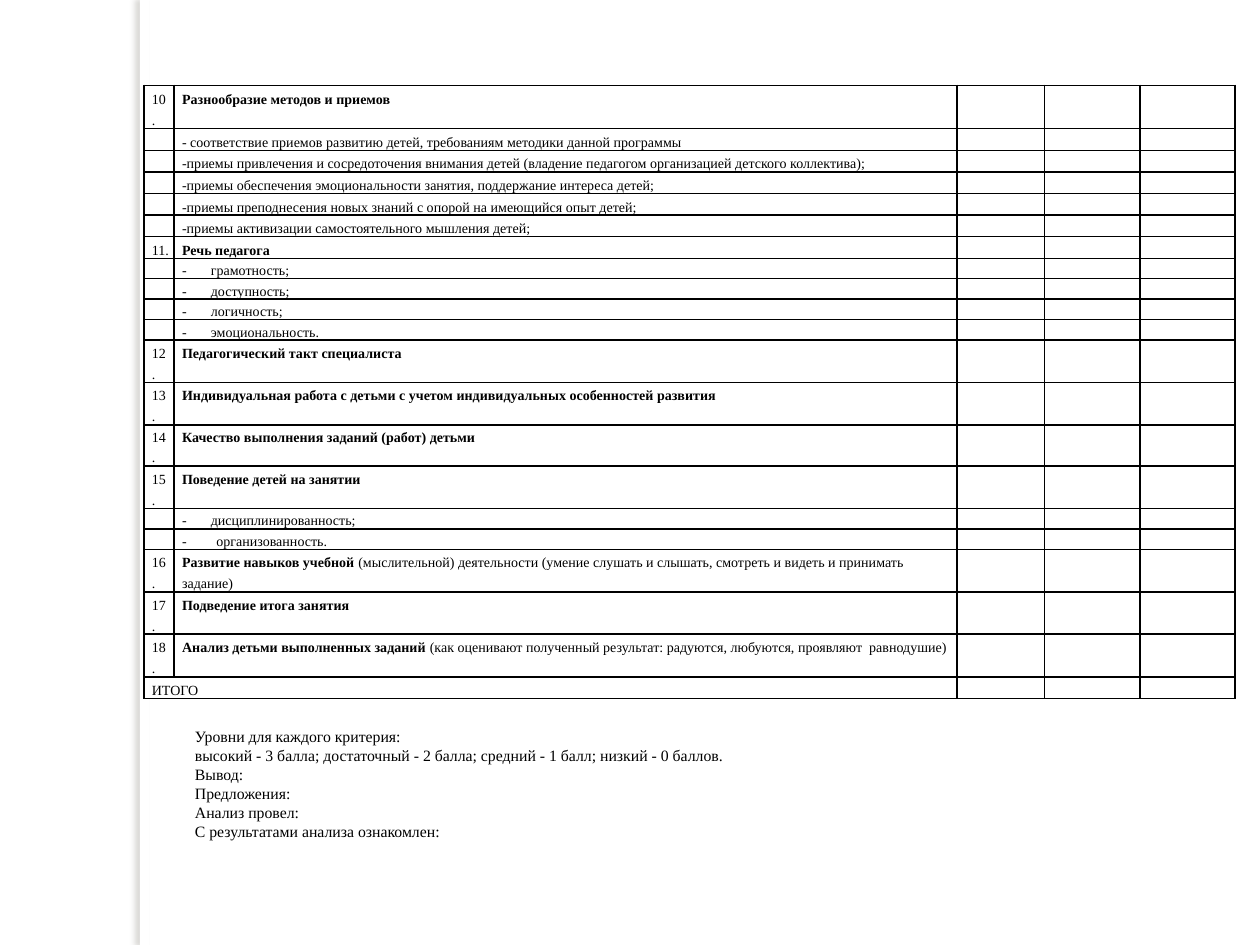
import dataclasses
import typing

import lxml.etree
import pptx
import pptx.dml.color
import pptx.enum.shapes
import pptx.enum.text
import pptx.oxml.ns
import pptx.util
from pptx.util import Cm

COLORS = {"text": "000000", "border": "000000", "paper": "FFFFFF", "shadow": "736F63"}
FONT = "Times New Roman"
TABLE_TEXT_SIZE = 8
COLUMN_WIDTHS = (0.61, 15.78, 1.77, 1.92, 1.92)


@dataclasses.dataclass
class Criterion:
    number: str = ""
    heading: str = ""
    detail: str = ""
    spacing: float = 12.3
    lines: int = 1
    tab: float = 0


CRITERIA = [
    Criterion("10.", "Разнообразие методов и приемов", spacing=12.4, lines=2),
    Criterion(detail="- соответствие приемов развитию детей, требованиям методики данной программы"),
    Criterion(detail="-приемы привлечения и сосредоточения внимания детей "
                     "(владение педагогом организацией детского коллектива);"),
    Criterion(detail="-приемы обеспечения эмоциональности занятия, поддержание интереса детей;"),
    Criterion(detail="-приемы преподнесения новых знаний с опорой на имеющийся опыт детей;", spacing=12.4),
    Criterion(detail="-приемы активизации самостоятельного мышления детей;", spacing=12.2),
    Criterion("11.", "Речь педагога", spacing=12.4),
    Criterion(detail="-\tграмотность;", spacing=11.6, tab=0.58),
    Criterion(detail="-\tдоступность;", spacing=11.7, tab=0.58),
    Criterion(detail="-\tлогичность;", spacing=11.6, tab=0.58),
    Criterion(detail="-\tэмоциональность.", spacing=11.7, tab=0.58),
    Criterion("12.", "Педагогический такт специалиста", spacing=12.1, lines=2),
    Criterion("13.", "Индивидуальная работа с детьми с учетом индивидуальных особенностей развития",
              spacing=12.1, lines=2),
    Criterion("14.", "Качество выполнения заданий (работ) детьми", spacing=11.7, lines=2),
    Criterion("15.", "Поведение детей на занятии", spacing=12.1, lines=2),
    Criterion(detail="-\tдисциплинированность;", spacing=11.7, tab=0.58),
    Criterion(detail="-\tорганизованность.", spacing=11.7, tab=0.69),
    Criterion("16.", "Развитие навыков учебной ",
              "(мыслительной) деятельности (умение слушать и слышать, смотреть и видеть и принимать задание)",
              spacing=12.1, lines=2),
    Criterion("17.", "Подведение итога занятия", spacing=12.1, lines=2),
    Criterion("18.", "Анализ детьми выполненных заданий ",
              "(как оценивают полученный результат: радуются, любуются, проявляют  равнодушие)",
              spacing=12.2, lines=2),
    Criterion("ИТОГО", spacing=12.4),
]

CONCLUSION = [
    "Уровни для каждого критерия:",
    "высокий - 3 балла; достаточный - 2 балла; средний - 1 балл; низкий - 0 баллов.",
    "Вывод:",
    "Предложения:",
    "Анализ провел:",
    "С результатами анализа ознакомлен:",
]


def add_xml(parent: typing.Any, tag: str, **attributes: typing.Any) -> typing.Any:
    values = {name: str(value) for name, value in attributes.items()}
    return lxml.etree.SubElement(parent, pptx.oxml.ns.qn(tag), values)


def add_text(paragraph: typing.Any, text: str, *, size: float, bold: bool = False) -> None:
    if not text:
        return
    run = paragraph.add_run()
    run.text = text
    run.font.name = FONT
    run.font.size = pptx.util.Pt(size)
    run.font.bold = bold
    run.font.color.rgb = pptx.dml.color.RGBColor.from_string(COLORS["text"])


def format_paragraph(paragraph: typing.Any, *, indent: float, spacing: float = 0, tab: float = 0) -> None:
    """Set the left indent and tab in centimetres and the exact line spacing in points."""
    if spacing:
        paragraph.line_spacing = pptx.util.Pt(spacing)
    properties = paragraph._p.get_or_add_pPr()
    properties.set("marL", str(int(Cm(indent))))
    if tab:
        tabs = add_xml(properties, "a:tabLst")
        add_xml(tabs, "a:tab", pos=int(Cm(tab)), algn="l")


def format_cell(cell: typing.Any, criterion: Criterion) -> None:
    cell.margin_left = cell.margin_right = Cm(0.1)
    cell.margin_top = cell.margin_bottom = 0
    properties = cell._tc.get_or_add_tcPr()
    for side in ("a:lnL", "a:lnR", "a:lnT", "a:lnB"):
        line = add_xml(properties, side, w=int(pptx.util.Pt(1)))
        add_xml(add_xml(line, "a:solidFill"), "a:srgbClr", val=COLORS["border"])
    cell.fill.background()
    paragraph = cell.text_frame.paragraphs[0]
    format_paragraph(paragraph, indent=0.06, spacing=criterion.spacing, tab=criterion.tab)
    # The end mark sets the height of an empty cell.
    end_mark = add_xml(paragraph._p, "a:endParaRPr", sz=TABLE_TEXT_SIZE * 100)
    add_xml(end_mark, "a:latin", typeface=FONT)


def add_criteria_table(slide: typing.Any) -> None:
    frame = slide.shapes.add_table(len(CRITERIA), len(COLUMN_WIDTHS), Cm(2.9), Cm(1.72),
                                   Cm(sum(COLUMN_WIDTHS)), Cm(12.3))
    table = frame.table
    table.first_row = table.horz_banding = False
    for column, width in zip(table.columns, COLUMN_WIDTHS):
        column.width = Cm(width)
    for row, criterion in zip(table.rows, CRITERIA):
        row.height = pptx.util.Pt(criterion.spacing * criterion.lines)
        for cell in row.cells:
            format_cell(cell, criterion)
        number, description = (row.cells[index].text_frame.paragraphs[0] for index in (0, 1))
        add_text(number, criterion.number, size=TABLE_TEXT_SIZE)
        add_text(description, criterion.heading, size=TABLE_TEXT_SIZE, bold=True)
        add_text(description, criterion.detail, size=TABLE_TEXT_SIZE)
    last = len(CRITERIA) - 1
    table.cell(last, 0).merge(table.cell(last, 1))


def add_page_edge(slide: typing.Any) -> None:
    """Draw the white strip that casts a soft shadow to the left."""
    edge = slide.shapes.add_shape(pptx.enum.shapes.MSO_SHAPE.RECTANGLE,
                                  Cm(2.82), 0, Cm(0.2), Cm(19.05))
    edge.fill.solid()
    edge.fill.fore_color.rgb = pptx.dml.color.RGBColor.from_string(COLORS["paper"])
    edge.line.fill.background()
    effects = add_xml(edge._element.spPr, "a:effectLst")
    shadow = add_xml(effects, "a:outerShdw", blurRad=int(pptx.util.Pt(3)), dist=int(pptx.util.Pt(3)),
                     dir=180 * 60000, algn="tl", rotWithShape=0)
    color = add_xml(shadow, "a:srgbClr", val=COLORS["shadow"])
    add_xml(color, "a:alpha", val=25000)


def add_conclusion(slide: typing.Any) -> None:
    frame = slide.shapes.add_textbox(Cm(3.3), Cm(14.53), Cm(17.55), Cm(2.57)).text_frame
    frame.word_wrap = True
    frame.auto_size = pptx.enum.text.MSO_AUTO_SIZE.SHAPE_TO_FIT_TEXT
    for index, text in enumerate(CONCLUSION):
        paragraph = frame.add_paragraph() if index else frame.paragraphs[0]
        format_paragraph(paragraph, indent=0.38)
        add_text(paragraph, text, size=9)


def main() -> None:
    presentation = pptx.Presentation()
    presentation.slide_width = Cm(25.4)
    presentation.slide_height = Cm(19.05)
    slide = presentation.slides.add_slide(presentation.slide_layouts[6])
    add_page_edge(slide)
    add_criteria_table(slide)
    add_conclusion(slide)
    presentation.save("out.pptx")


if __name__ == "__main__":
    main()
